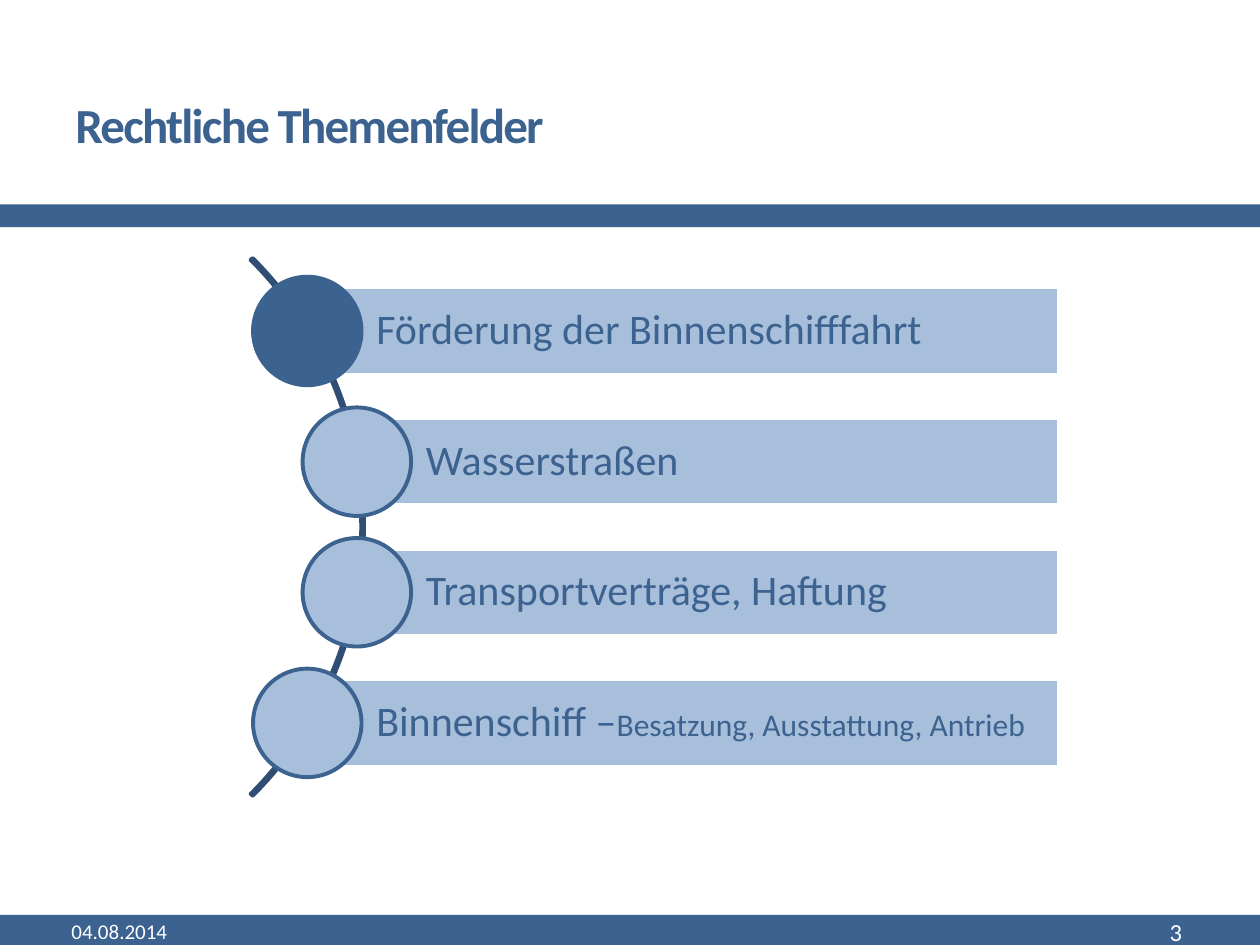
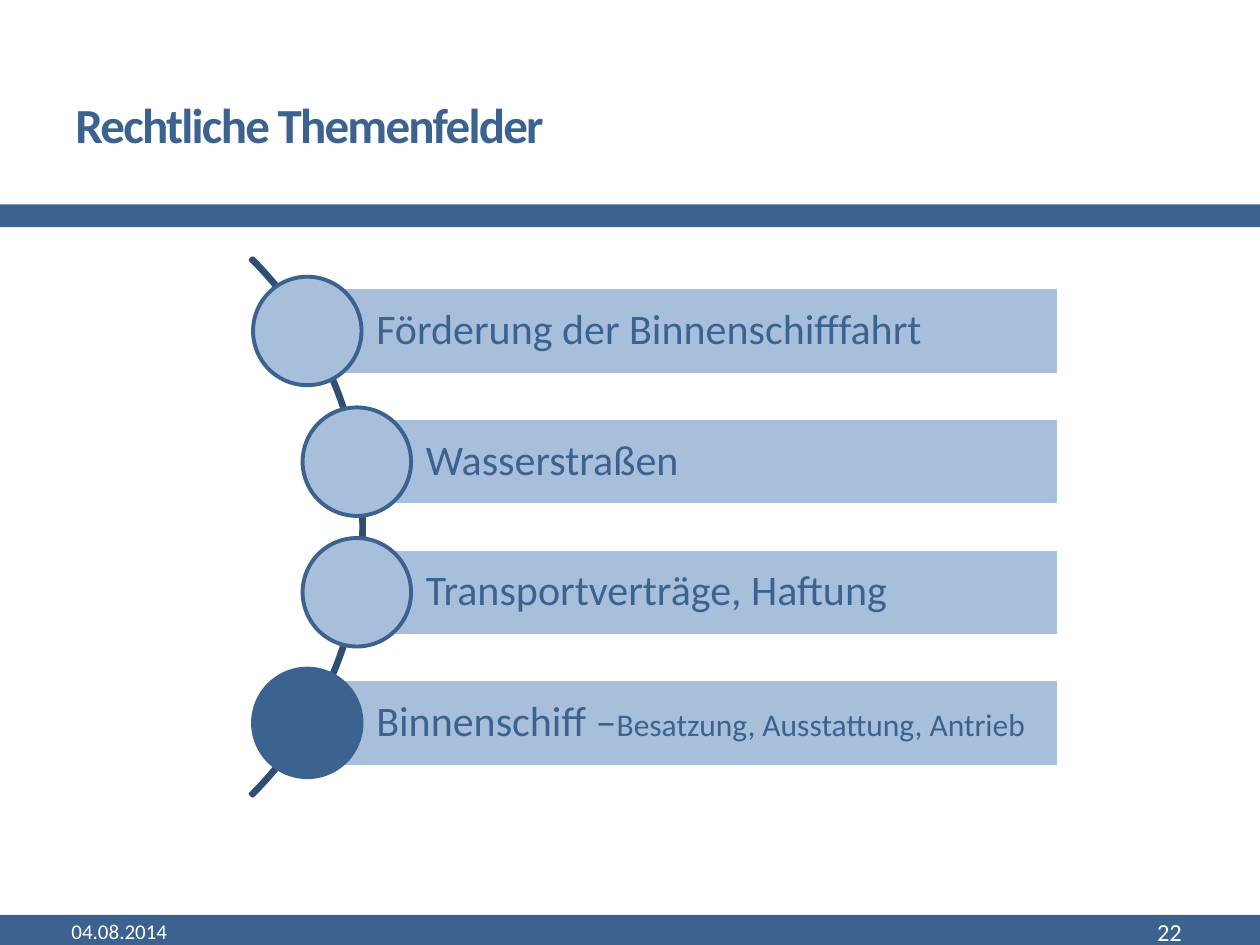
from pptx import Presentation
from pptx.dml.color import RGBColor
from pptx.enum.shapes import MSO_SHAPE
from pptx.enum.text import MSO_ANCHOR, PP_ALIGN
from pptx.util import Pt

BLUE, LIGHT, DARK, WHITE = "3C628F", "A8BFDB", "304E73", "FFFFFF"
FONT = "Calibri"

TOPICS = [
    ("Förderung der Binnenschifffahrt", ""),
    ("Wasserstraßen", ""),
    ("Transportverträge, Haftung", ""),
    ("Binnenschiff –", "Besatzung, Ausstattung, Antrieb"),
]
BAR_LEFTS = [175.6, 203.9, 203.9, 175.6]
BAR_RIGHT, BAR_TOP, BAR_HEIGHT, BAR_PITCH = 605.3, 164.3, 49.7, 74.65
CIRCLE = 62


def rgb(color):
    return RGBColor.from_string(color)


class Deck:
    def __init__(self):
        self.prs = Presentation()
        self.prs.slide_width, self.prs.slide_height = Pt(720), Pt(540)
        self.s = None

    def shape(self, kind, x, y, w, h, fill=None, line=None, width=2.08):
        sp = self.s.shapes.add_shape(kind, Pt(x), Pt(y), Pt(w), Pt(h))
        sp.shadow.inherit = False
        if fill:
            sp.fill.solid()
            sp.fill.fore_color.rgb = rgb(fill)
        else:
            sp.fill.background()
        if line:
            sp.line.color.rgb = rgb(line)
            sp.line.width = Pt(width)
        else:
            sp.line.fill.background()
        return sp

    def label(self, sp, text, size, color, align=PP_ALIGN.LEFT):
        """Set one vertically centred paragraph in a shape and return it."""
        tf = sp.text_frame
        tf.word_wrap = True
        tf.vertical_anchor = MSO_ANCHOR.MIDDLE
        tf.text = text
        p = tf.paragraphs[0]
        p.alignment = align
        self.style(p.runs[0], size, color)
        return p

    def style(self, r, size, color):
        r.font.name, r.font.size = FONT, Pt(size)
        r.font.color.rgb = rgb(color)

    def text(self, x, y, w, h, text, size, color, align=PP_ALIGN.LEFT):
        sp = self.s.shapes.add_textbox(Pt(x), Pt(y), Pt(w), Pt(h))
        return self.label(sp, text, size, color, align)

    def title(self, text):
        r = self.text(36, 31.7, 648, 77.8, text, 28, BLUE).runs[0]
        r.font.bold = True
        r.font._element.set("spc", "-100")

    def new_slide(self, title, number):
        """Start a slide with its bands, title, date and page number."""
        self.s = self.prs.slides.add_slide(self.prs.slide_layouts[6])
        self.shape(MSO_SHAPE.RECTANGLE, -3, 522.8, 731.5, 36, BLUE)
        self.shape(MSO_SHAPE.RECTANGLE, 0, 116.8, 728.6, 13, BLUE)
        self.title(title)
        self.text(33.8, 519.2, 228.2, 25.9, "04.08.2014", 12, WHITE)
        self.text(598.3, 519.2, 84.2, 25.9, str(number), 14, WHITE,
                  PP_ALIGN.RIGHT)

    def arc(self):
        sp = self.shape(MSO_SHAPE.BLOCK_ARC, -226.8, 83.7, 434.9, 434.9,
                        line=DARK)
        # Start angle, end angle and thickness
        for i, value in enumerate((189, 27, 0.004)):
            sp.adjustments[i] = value

    def bar(self, x, y, text, detail):
        sp = self.shape(MSO_SHAPE.RECTANGLE, x, y, BAR_RIGHT - x, BAR_HEIGHT,
                        LIGHT, WHITE)
        p = self.label(sp, text, 24, BLUE)
        p.line_spacing = 0.9
        tf = sp.text_frame
        tf.margin_left = Pt(39.4)
        tf.margin_top = tf.margin_right = tf.margin_bottom = Pt(5)
        if detail:
            r = p.add_run()
            r.text = detail
            self.style(r, 18, BLUE)

    def topics(self, active):
        """Draw the topic bars along the arc; the active circle is dark."""
        self.arc()
        for i, (x, (text, detail)) in enumerate(zip(BAR_LEFTS, TOPICS)):
            y = BAR_TOP + i * BAR_PITCH
            self.bar(x, y, text, detail)
            self.shape(MSO_SHAPE.OVAL, x - CIRCLE / 2,
                       y + (BAR_HEIGHT - CIRCLE) / 2, CIRCLE, CIRCLE,
                       BLUE if i == active else LIGHT, BLUE, 2.25)


def main():
    deck = Deck()
    for number, active in ((3, 0), (22, 3)):
        deck.new_slide("Rechtliche Themenfelder", number)
        deck.topics(active)
    deck.prs.save("out.pptx")


if __name__ == "__main__":
    main()
